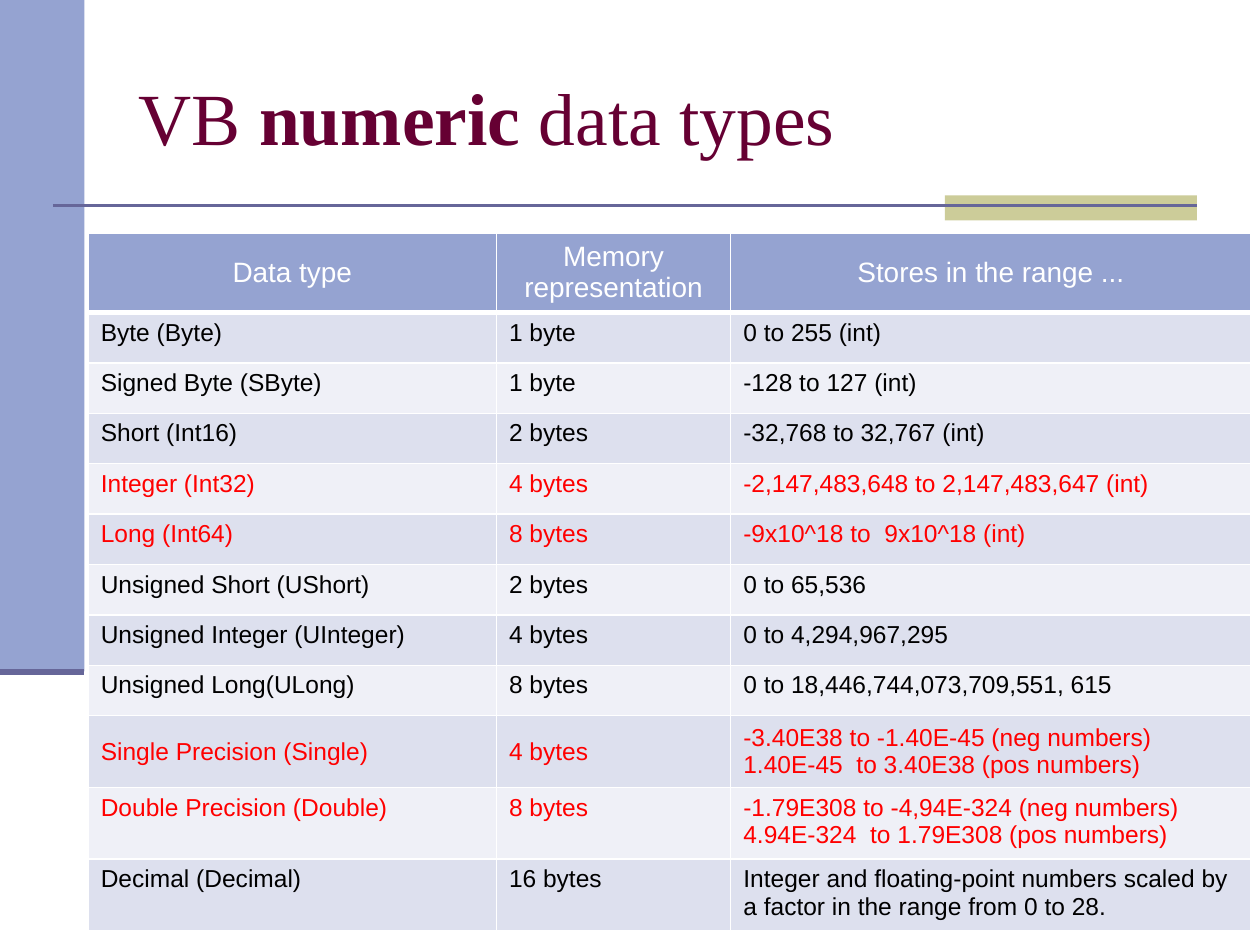
"""Build a slide with a table of the VB numeric data types."""
import pptx
import pptx.dml.color
import pptx.enum.shapes
import pptx.enum.text
import pptx.oxml
import pptx.oxml.ns
import pptx.util
from lxml import etree

Inches = pptx.util.Inches
ALIGN = pptx.enum.text.PP_ALIGN
ANCHOR = pptx.enum.text.MSO_ANCHOR
HUES = {
    "blue": "95A3D1", "sand": "CCCC99", "rule": "666699", "wine": "660033",
    "white": "FFFFFF", "black": "000000", "red": "FF0000",
    "dark": "DDE0EE", "light": "EFF0F7",
}
COLS = [3.24, 1.86, 4.13]
HEAD = ["Data type", "Memory representation", "Stores in the range ..."]
ROWS = [
    ("Byte (Byte)", "1 byte", "0 to 255 (int)"),
    ("Signed Byte (SByte)", "1 byte", "-128 to 127 (int)"),
    ("Short (Int16)", "2 bytes", "-32,768 to 32,767 (int)"),
    ("Integer (Int32)", "4 bytes", "-2,147,483,648 to 2,147,483,647 (int)"),
    ("Long (Int64)", "8 bytes", "-9x10^18 to  9x10^18 (int)"),
    ("Unsigned Short (UShort)", "2 bytes", "0 to 65,536"),
    ("Unsigned Integer (UInteger)", "4 bytes", "0 to 4,294,967,295"),
    ("Unsigned Long(ULong)", "8 bytes", "0 to 18,446,744,073,709,551, 615"),
    ("Single Precision (Single)", "4 bytes",
     "-3.40E38 to -1.40E-45 (neg numbers)\n1.40E-45  to 3.40E38 (pos numbers)"),
    ("Double Precision (Double)", "8 bytes",
     "-1.79E308 to -4,94E-324 (neg numbers)\n4.94E-324  to 1.79E308 (pos numbers)"),
    ("Decimal (Decimal)", "16 bytes",
     "Integer and floating-point numbers scaled by a factor in the range from 0 to 28."),
]
RED = {4, 5, 9, 10}
MID = {0, 9}
TALL = 9


def color(name):
    """Return the named colour."""
    return pptx.dml.color.RGBColor.from_string(HUES[name])


def write(para, text, size=14, font="Arial", hue="black", bold=False, align=ALIGN.LEFT):
    """Add a formatted run to a paragraph."""
    para.alignment = align
    run = para.add_run()
    run.text = text
    run.font.size = pptx.util.Pt(size)
    run.font.name = font
    run.font.bold = bold
    run.font.color.rgb = color(hue)


def add_block(slide, left, top, width, height, hue):
    """Add a plain filled rectangle."""
    shape = slide.shapes.add_shape(
        pptx.enum.shapes.MSO_SHAPE.RECTANGLE,
        Inches(left), Inches(top), Inches(width), Inches(height))
    shape.shadow.inherit = False
    shape.fill.solid()
    shape.fill.fore_color.rgb = color(hue)
    shape.line.fill.background()


def add_rule(slide, left, right, top, width):
    """Add a horizontal line."""
    line = slide.shapes.add_connector(
        pptx.enum.shapes.MSO_CONNECTOR.STRAIGHT,
        Inches(left), Inches(top), Inches(right), Inches(top))
    line.line.color.rgb = color("rule")
    line.line.width = pptx.util.Pt(width)
    etree.SubElement(line._element.spPr, pptx.oxml.ns.qn("a:effectLst"))


def add_title(slide):
    """Place the title and set its mixed weights."""
    title = slide.shapes.title
    title.left, title.top = Inches(1), Inches(0.3)
    title.width, title.height = Inches(8.5), Inches(1.25)
    frame = title.text_frame
    frame.word_wrap = True
    frame.vertical_anchor = ANCHOR.MIDDLE
    for text, bold in [("VB ", False), ("numeric", True), (" data types", False)]:
        write(frame.paragraphs[0], text, size=42, font="Times New Roman",
              hue="wine", bold=bold)


def add_edges(cell, base):
    """Draw white borders round a cell, with its own base width."""
    for side, width in [("L", 1), ("R", 1), ("T", 1), ("B", base)]:
        cell._tc.get_or_add_tcPr().append(pptx.oxml.parse_xml(
            f'<a:ln{side} {pptx.oxml.ns.nsdecls("a")} w="{pptx.util.Pt(width)}">'
            f'<a:solidFill><a:srgbClr val="{HUES["white"]}"/></a:solidFill></a:ln{side}>'))


def fill_cell(cell, text, fill, anchor, base=1, **style):
    """Set the borders, fill and text of a cell."""
    add_edges(cell, base)
    cell.fill.solid()
    cell.fill.fore_color.rgb = color(fill)
    cell.vertical_anchor = anchor
    frame = cell.text_frame
    for i, line in enumerate(text.split("\n")):
        para = frame.add_paragraph() if i else frame.paragraphs[0]
        write(para, line, **style)


def add_types(slide):
    """Add the table of data types."""
    data = [HEAD, *ROWS]
    table = slide.shapes.add_table(
        len(data), len(COLS), Inches(0.7), Inches(1.85),
        Inches(sum(COLS)), Inches(5.5)).table
    for col, width in zip(table.columns, COLS):
        col.width = Inches(width)
    for i, row in enumerate(data):
        table.rows[i].height = Inches(0.63 if i == 0 else 0.57 if i >= TALL else 0.4)
        anchor = ANCHOR.MIDDLE if i in MID else ANCHOR.TOP
        if i == 0:
            fill = "blue"
            style = {"size": 16, "hue": "white", "align": ALIGN.CENTER, "base": 3}
        else:
            fill = "dark" if i % 2 else "light"
            style = {"hue": "red" if i in RED else "black"}
        for j, text in enumerate(row):
            fill_cell(table.cell(i, j), text, fill, anchor, **style)


def main():
    """Build and save the slide."""
    deck = pptx.Presentation()
    deck.slide_width, deck.slide_height = Inches(10), Inches(7.5)
    slide = deck.slides.add_slide(deck.slide_layouts[5])
    add_block(slide, 0, 0, 0.67, 5.33, "blue")
    add_block(slide, 7.5, 1.55, 2, 0.2, "sand")
    add_rule(slide, 0.42, 9.5, 1.63, 1.5)
    add_rule(slide, 0, 0.67, 5.33, 3.5)
    add_title(slide)
    add_types(slide)
    deck.save("out.pptx")


if __name__ == "__main__":
    main()
